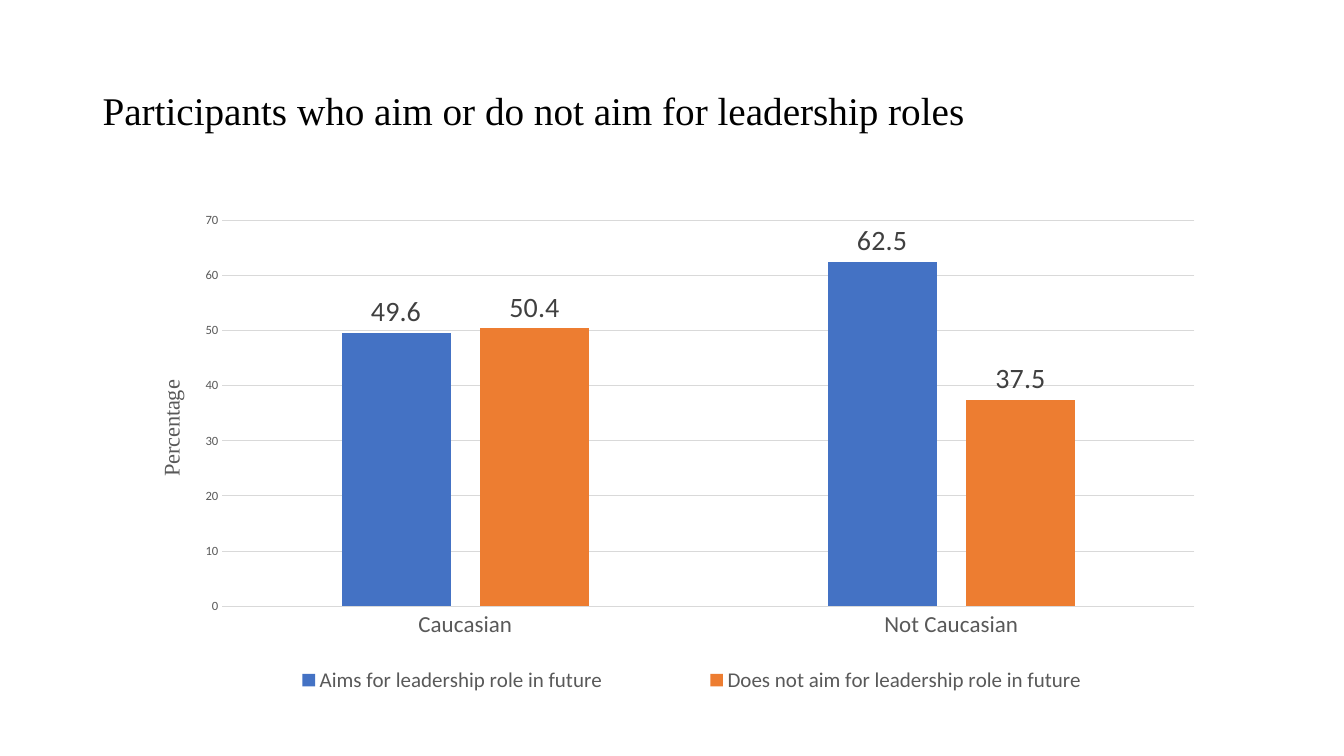
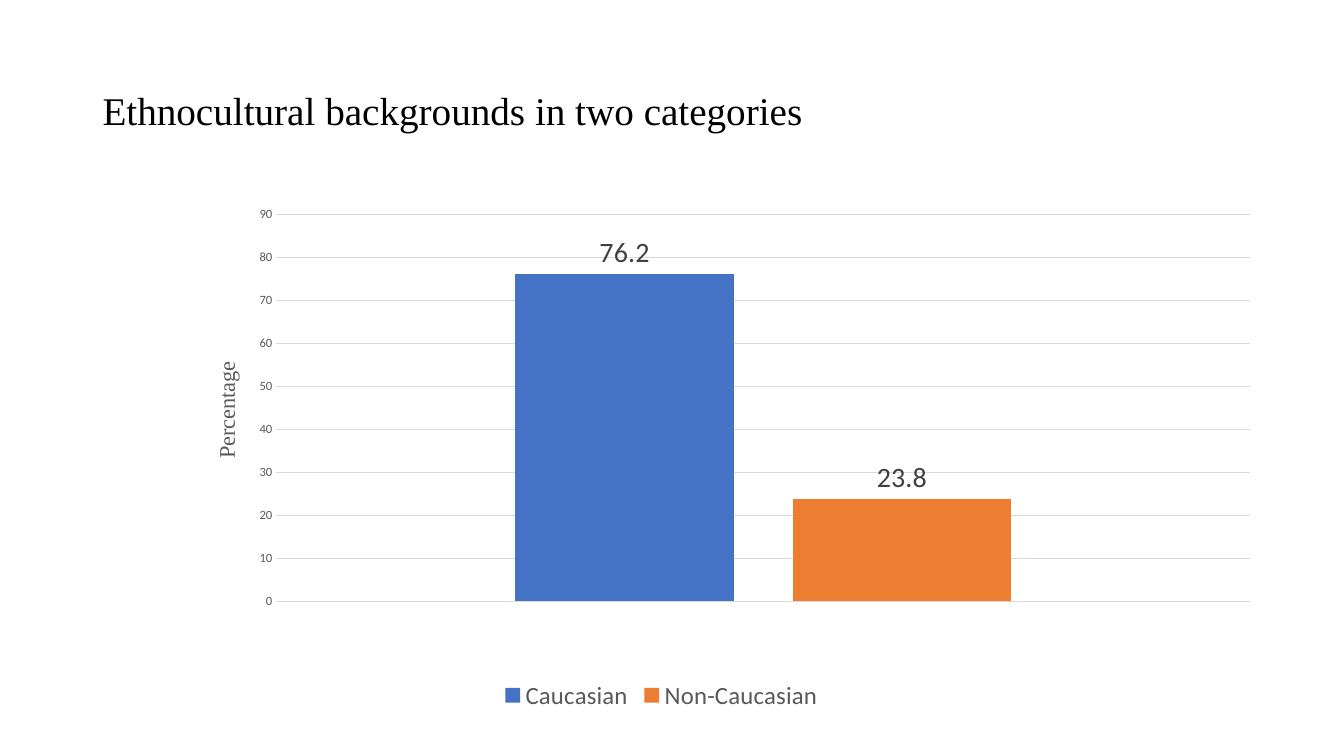
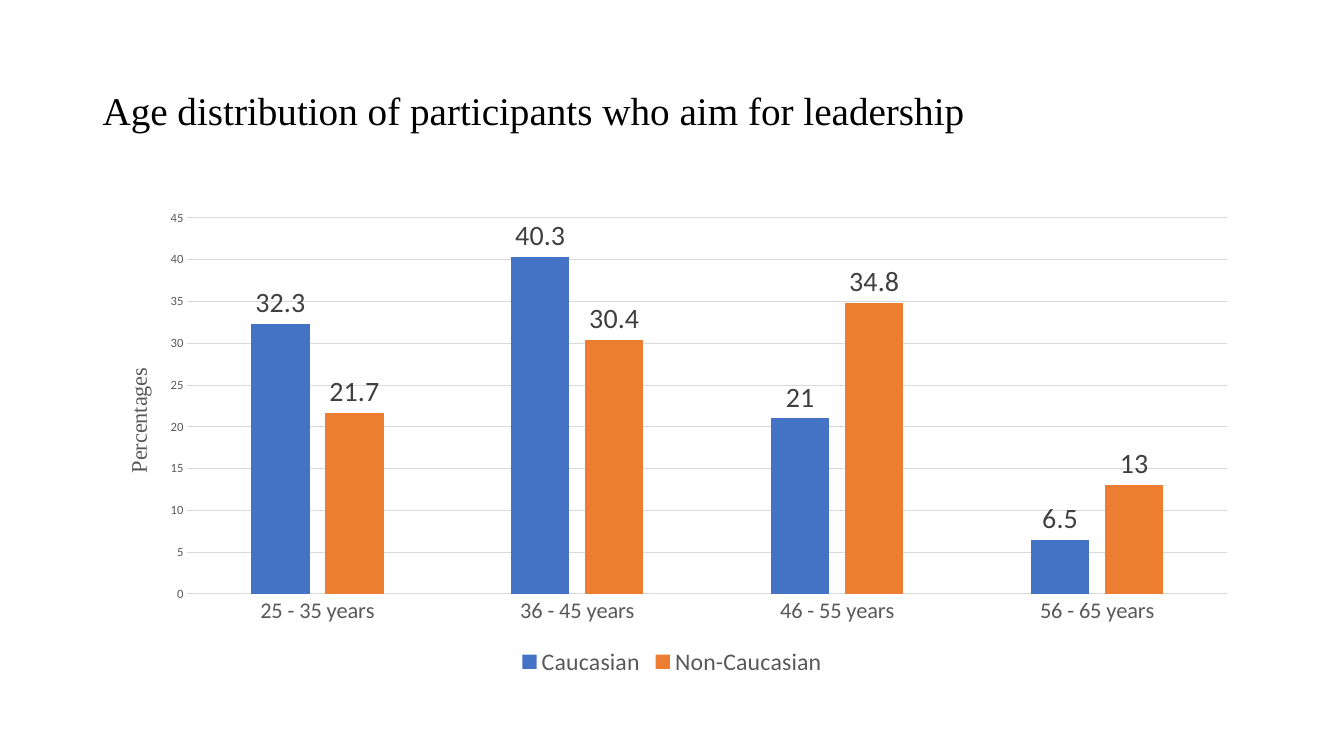
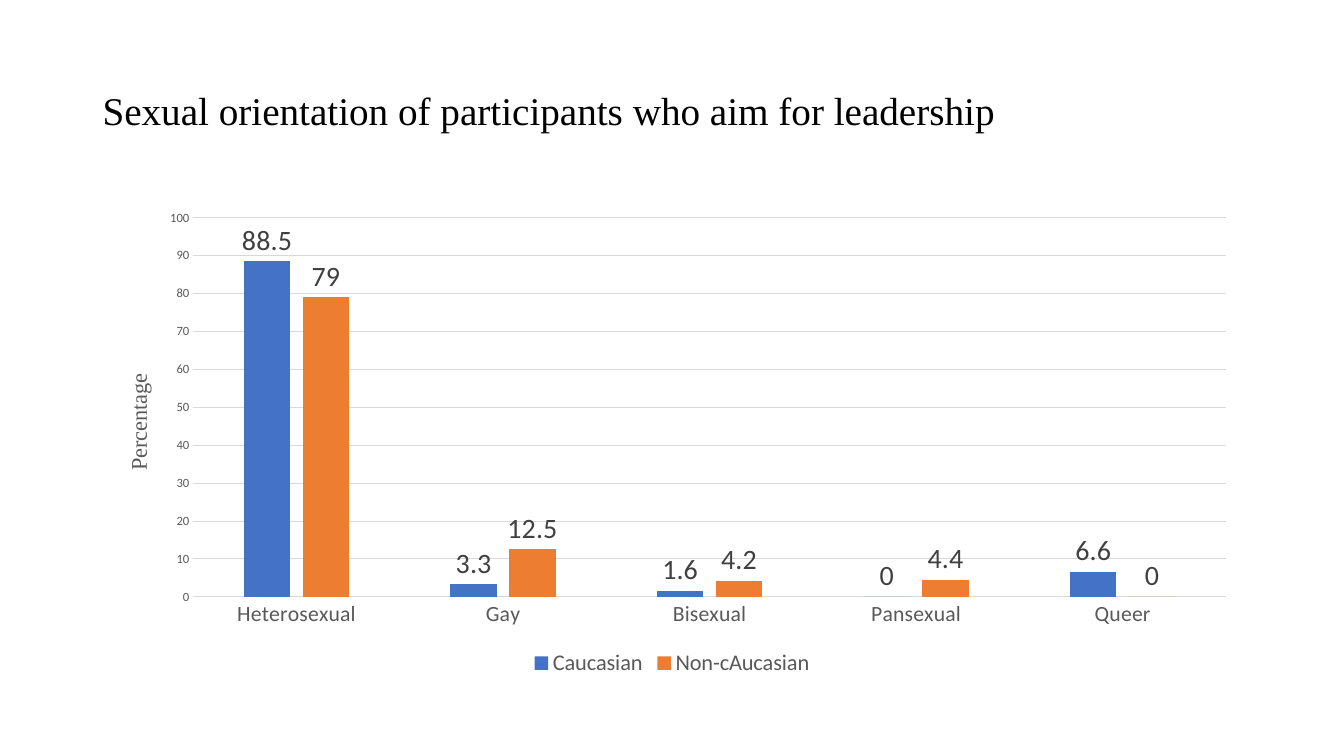
from lxml.etree import SubElement
from pptx import Presentation
from pptx.chart.data import CategoryChartData
from pptx.dml.color import RGBColor
from pptx.enum.chart import XL_CHART_TYPE as ChartType
from pptx.enum.chart import XL_LABEL_POSITION as LabelPosition
from pptx.enum.chart import XL_LEGEND_POSITION as LegendPosition
from pptx.enum.chart import XL_TICK_MARK as TickMark
from pptx.enum.text import MSO_ANCHOR as Anchor
from pptx.enum.text import PP_ALIGN as Align
from pptx.oxml.ns import qn
from pptx.util import Cm, Pt

TITLE_FONT = "Times New Roman"
CHART_FONT = "Calibri"
BLACK, GREY, DARK, PALE = "000000", "595959", "404040", "D9D9D9"
SERIES_COLOURS = ("4472C4", "ED7D31")
CHART_TOP = 5.08
TITLE_ONLY = 5


def rgb(colour):
    return RGBColor.from_string(colour)


def style_font(font, size, colour=GREY, name=CHART_FONT):
    font.size, font.name, font.bold = Pt(size), name, False
    font.color.rgb = rgb(colour)


def style_line(line):
    line.color.rgb = rgb(PALE)
    line.width = Pt(0.75)


def add_titled_slide(deck, heading):
    slide = deck.slides.add_slide(deck.slide_layouts[TITLE_ONLY])
    title = slide.shapes.title
    title.left, title.top, title.width, title.height = Cm(2.33), Cm(1.01), Cm(29.21), Cm(3.68)
    title.text_frame.text = heading
    title.text_frame.vertical_anchor = Anchor.MIDDLE
    paragraph = title.text_frame.paragraphs[0]
    paragraph.alignment = Align.LEFT
    paragraph.line_spacing = 0.9
    style_font(paragraph.font, 28, BLACK, TITLE_FONT)
    return slide


def place(chart, part, x, y, w=None, h=None):
    element = chart._chartSpace.xpath(f".//{part}")[0]
    for old in element.findall(qn("c:layout")):
        element.remove(old)
    layout = SubElement(element, qn("c:layout"))
    overlay = element.find(qn("c:overlay"))
    if overlay is None:
        element.insert(0, layout)
    else:
        overlay.addprevious(layout)
    manual = SubElement(layout, qn("c:manualLayout"))
    settings = {"xMode": "edge", "yMode": "edge", "x": x, "y": y, "w": w, "h": h}
    if part == "c:plotArea":
        settings = {"layoutTarget": "inner", **settings}
    for key, value in settings.items():
        if value is not None:
            SubElement(manual, qn(f"c:{key}")).set("val", str(value))


def style_category_axis(axis, size):
    if size is None:
        axis.visible = False
        return
    axis.major_tick_mark = axis.minor_tick_mark = TickMark.NONE
    style_font(axis.tick_labels.font, size)
    style_line(axis.format.line)


def style_value_axis(axis, caption, top, step):
    axis.minimum_scale, axis.maximum_scale, axis.major_unit = 0, top, step
    axis.major_tick_mark = axis.minor_tick_mark = TickMark.NONE
    axis.format.line.fill.background()
    style_font(axis.tick_labels.font, 9)
    style_line(axis.major_gridlines.format.line)
    frame = axis.axis_title.text_frame
    frame.text = caption
    frame._txBody.bodyPr.set("rot", "-5400000")
    frame._txBody.bodyPr.set("vert", "horz")
    style_font(frame.paragraphs[0].font, 16, GREY, TITLE_FONT)


def style_columns(plot):
    plot.gap_width, plot.overlap = 219, -27
    plot.vary_by_categories = False
    for series, colour in zip(plot.series, SERIES_COLOURS):
        series.format.fill.solid()
        series.format.fill.fore_color.rgb = rgb(colour)
        series.invert_if_negative = False
        labels = series.data_labels
        labels.show_value = True
        labels.position = LabelPosition.OUTSIDE_END
        labels.number_format, labels.number_format_is_linked = "General", False
        style_font(labels.font, 20, DARK)


def add_column_chart(slide, box, categories, groups, scale, category_size, legend_size,
                     plot_area, caption_at, caption="Percentage", legend_area=None):
    data = CategoryChartData()
    data.categories = categories
    for name, values in groups.items():
        data.add_series(name, values)
    left, width, height = box
    chart = slide.shapes.add_chart(ChartType.COLUMN_CLUSTERED, Cm(left), Cm(CHART_TOP),
                                   Cm(width), Cm(height), data).chart
    chart.has_title = False
    style_font(chart.font, 10, BLACK)
    style_category_axis(chart.category_axis, category_size)
    style_value_axis(chart.value_axis, caption, *scale)
    style_columns(chart.plots[0])
    chart.has_legend = True
    chart.legend.position = LegendPosition.BOTTOM
    chart.legend.include_in_layout = False
    style_font(chart.legend.font, legend_size)
    place(chart, "c:plotArea", *plot_area)
    place(chart, "c:valAx/c:title", *caption_at)
    if legend_area:
        place(chart, "c:legend", *legend_area)


def main():
    deck = Presentation()
    deck.slide_width, deck.slide_height = Cm(33.87), Cm(19.05)

    aims = add_titled_slide(deck, "Participants who aim or do not aim for leadership roles")
    add_column_chart(
        aims, (1.93, 29.62, 13.21), ["Caucasian", "Not Caucasian"],
        {"Aims for leadership role in future": (49.6, 62.5),
         "Does not aim for leadership role in future": (50.4, 37.5)},
        (70, 10), 16.4, 15, (0.124, 0.036, 0.827, 0.736), (0.065, 0.333),
        legend_area=(0.106, 0.878, 0.835, 0.07))

    backgrounds = add_titled_slide(deck, "Ethnocultural backgrounds in two categories")
    add_column_chart(
        backgrounds, (1.83, 29.69, 12.95), ["1"],
        {"Caucasian": (76.2,), "Non-Caucasian": (23.8,)},
        (90, 10), None, 17.7, (0.173, 0.025, 0.827, 0.753), (0.115, 0.304))

    standard_box = (2.33, 29.21, 12.09)
    ages = add_titled_slide(deck, "Age distribution of participants who aim for leadership")
    add_column_chart(
        ages, standard_box,
        [f"{first} - {first + 10 - (first > 25)} years" if first == 25
         else f"{first} - {first + 9} years" for first in (25, 36, 46, 56)],
        {"Caucasian": (32.3, 40.3, 21, 6.5), "Non-Caucasian": (21.7, 30.4, 34.8, 13)},
        (45, 5), 16, 17, (0.082, 0.034, 0.897, 0.784), (0.024, 0.338), "Percentages")

    orientation = add_titled_slide(deck, "Sexual orientation of participants who aim for leadership")
    add_column_chart(
        orientation, standard_box,
        ["Heterosexual", "Gay", "Bisexual", "Pansexual", "Queer"],
        {"Caucasian": (88.5, 3.3, 1.6, 0, 6.6), "Non-cAucasian": (79, 12.5, 4.2, 4.4, 0)},
        (100, 10), 15.5, 16, (0.087, 0.034, 0.891, 0.79), (0.024, 0.351))

    deck.save("out.pptx")


if __name__ == "__main__":
    main()
